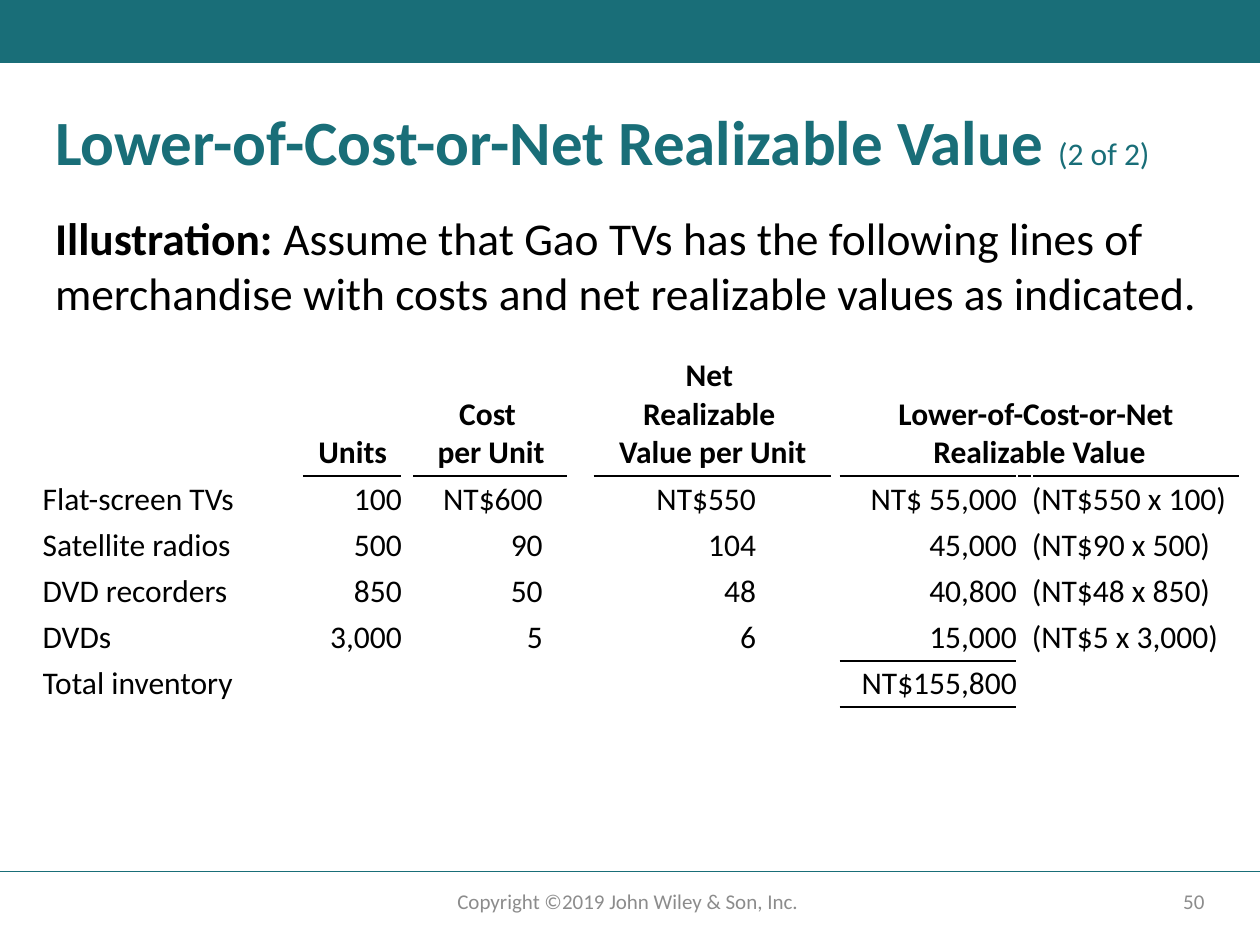
from dataclasses import dataclass

from lxml import etree
from pptx import Presentation
from pptx.dml.color import RGBColor
from pptx.enum.shapes import MSO_CONNECTOR, MSO_SHAPE
from pptx.enum.text import MSO_ANCHOR, PP_ALIGN
from pptx.oxml.ns import qn
from pptx.util import Cm, Pt

LEFT, CENTER, RIGHT = PP_ALIGN.LEFT, PP_ALIGN.CENTER, PP_ALIGN.RIGHT
TOP, MIDDLE, BOTTOM = MSO_ANCHOR.TOP, MSO_ANCHOR.MIDDLE, MSO_ANCHOR.BOTTOM
RECTANGLE, STRAIGHT = MSO_SHAPE.RECTANGLE, MSO_CONNECTOR.STRAIGHT

TEAL = RGBColor(0x19, 0x6E, 0x78)
GRAY = RGBColor(0x8C, 0x8C, 0x8C)
BLACK = RGBColor(0, 0, 0)
WHITE = RGBColor(0xFF, 0xFF, 0xFF)

SLIDE_WIDTH, SLIDE_HEIGHT = 25.4, 19.05
MARGIN_LEFT = 0.86
HEADER_HEIGHT, ITEM_HEIGHT = 2.41, 0.93
CELL_PAD = 0.08


@dataclass
class Span:
    text: str
    size: int
    color: RGBColor
    bold: bool = False


@dataclass
class Caption:
    left: float
    top: float
    width: float
    height: float
    spans: list[Span]
    align: PP_ALIGN = LEFT
    anchor: MSO_ANCHOR = MIDDLE
    line_spacing: float = 1.0


@dataclass
class Column:
    width: float
    heading: str = ""
    align: PP_ALIGN = LEFT
    pad_right: float = 0


CAPTIONS = [
    Caption(MARGIN_LEFT, 2.11, 23.7, 1.65, [
        Span("Lower-of-Cost-or-Net Realizable Value ", 36, TEAL, True),
        Span("(2 of 2)", 18, TEAL),
    ], line_spacing=0.9),
    Caption(MARGIN_LEFT, 4.11, 23.7, 2.54, [
        Span("Illustration: ", 26, BLACK, True),
        Span("Assume that Gao TVs has the following lines of merchandise "
             "with costs and net realizable values as indicated.", 26, BLACK),
    ], anchor=TOP),
    Caption(8.41, 17.65, 8.59, 1.02,
            [Span("Copyright ©2019 John Wiley & Son, Inc. ", 12, GRAY)], CENTER),
    Caption(17.93, 17.65, 6.6, 1.02, [Span("50", 12, GRAY)], RIGHT),
]

COLUMNS = [
    Column(5.26, pad_right=0.25),
    Column(1.98, "Units", RIGHT),
    Column(0.25),
    Column(3.1, "Cost \nper Unit", RIGHT, 0.51),
    Column(0.53),
    Column(4.78, "Net \nRealizable \nValue per Unit", RIGHT, 1.52),
    Column(0.18),
    Column(3.56, "Lower-of-Cost-or-Net \nRealizable Value", RIGHT),
    Column(0.3),
    Column(4.17),
]
LOWER_VALUE, LAST = 7, 9

ITEMS = [
    ("Flat-screen TVs", "100", "NT$600", "NT$550", "NT$ 55,000", "(NT$550 x 100)"),
    ("Satellite radios", "500", "90", "104", "45,000", "(NT$90 x 500)"),
    ("DVD recorders", "850", "50", "48", "40,800", "(NT$48 x 850)"),
    ("DVDs", "3,000", "5", "6", "15,000", "(NT$5 x 3,000)"),
    ("Total inventory", "", "", "", "NT$155,800", ""),
]
ITEM_COLUMNS = (0, 1, 3, 5, LOWER_VALUE, LAST)
RULES = {(1, column) for column in (1, 3, 5, 7, 8, 9)} | {(5, LOWER_VALUE), (6, LOWER_VALUE)}


def apply(target, values: dict) -> None:
    for attribute, value in values.items():
        setattr(target, attribute, value)


def style_font(font, size: int, color: RGBColor, bold: bool) -> None:
    apply(font, {"name": "Calibri", "size": Pt(size), "bold": bold})
    font.color.rgb = color


def draw_caption(slide, caption: Caption) -> None:
    box = slide.shapes.add_textbox(
        Cm(caption.left), Cm(caption.top), Cm(caption.width), Cm(caption.height))
    frame = box.text_frame
    apply(frame, {"word_wrap": True, "vertical_anchor": caption.anchor})
    paragraph = frame.paragraphs[0]
    apply(paragraph, {"alignment": caption.align, "line_spacing": caption.line_spacing})
    for span in caption.spans:
        run = paragraph.add_run()
        run.text = span.text
        style_font(run.font, span.size, span.color, span.bold)


def draw_band(slide) -> None:
    band = slide.shapes.add_shape(RECTANGLE, 0, 0, Cm(SLIDE_WIDTH), Cm(1.27))
    band.shadow.inherit = False
    band.fill.solid()
    band.fill.fore_color.rgb = TEAL
    band.line.fill.background()


def draw_footer_rule(slide) -> None:
    rule = slide.shapes.add_connector(STRAIGHT, 0, Cm(17.57), Cm(SLIDE_WIDTH), Cm(17.57))
    rule.line.color.rgb = TEAL
    rule.line.width = Pt(1)
    etree.SubElement(rule._element.spPr, qn("a:effectLst"))


def set_borders(cell, row: int, column: int) -> None:
    edges = {
        "a:lnL": WHITE,
        "a:lnR": WHITE,
        "a:lnT": BLACK if (row, column) in RULES else WHITE,
        "a:lnB": BLACK if (row + 1, column) in RULES else WHITE,
    }
    properties = cell._tc.get_or_add_tcPr()
    for tag, color in edges.items():
        edge = etree.SubElement(properties, qn(tag), w=str(Pt(1)))
        fill = etree.SubElement(edge, qn("a:solidFill"))
        etree.SubElement(fill, qn("a:srgbClr"), val=str(color))


def write_cell(cell, text: str, align: PP_ALIGN, bold: bool) -> None:
    cell.text_frame.text = text
    for paragraph in cell.text_frame.paragraphs:
        paragraph.alignment = align
        for run in paragraph.runs:
            style_font(run.font, 18, BLACK, bold)


def draw_inventory(slide) -> None:
    row_count = len(ITEMS) + 1
    width = sum(column.width for column in COLUMNS)
    height = HEADER_HEIGHT + ITEM_HEIGHT * len(ITEMS)
    inventory = slide.shapes.add_table(
        row_count, len(COLUMNS), Cm(MARGIN_LEFT), Cm(7.19), Cm(width), Cm(height)).table
    apply(inventory, {"first_row": False, "horz_banding": False})
    for row in range(row_count):
        heading = row == 0
        inventory.rows[row].height = Cm(ITEM_HEIGHT if row else HEADER_HEIGHT)
        values = {} if heading else dict(zip(ITEM_COLUMNS, ITEMS[row - 1]))
        for index, column in enumerate(COLUMNS):
            inventory.columns[index].width = Cm(column.width)
            cell = inventory.cell(row, index)
            apply(cell, {
                "margin_left": 0,
                "margin_right": Cm(0 if heading else column.pad_right),
                "margin_top": Cm(0 if heading else CELL_PAD),
                "margin_bottom": Cm(CELL_PAD),
                "vertical_anchor": BOTTOM,
            })
            set_borders(cell, row, index)
            cell.fill.background()
            text = column.heading if heading else values.get(index, "")
            write_cell(cell, text, CENTER if heading else column.align, heading)
    inventory.cell(0, LOWER_VALUE).merge(inventory.cell(0, LAST))


def main() -> None:
    deck = Presentation()
    apply(deck, {"slide_width": Cm(SLIDE_WIDTH), "slide_height": Cm(SLIDE_HEIGHT)})
    slide = deck.slides.add_slide(deck.slide_layouts[6])
    draw_band(slide)
    draw_footer_rule(slide)
    for caption in CAPTIONS:
        draw_caption(slide, caption)
    draw_inventory(slide)
    deck.save("out.pptx")


if __name__ == "__main__":
    main()
